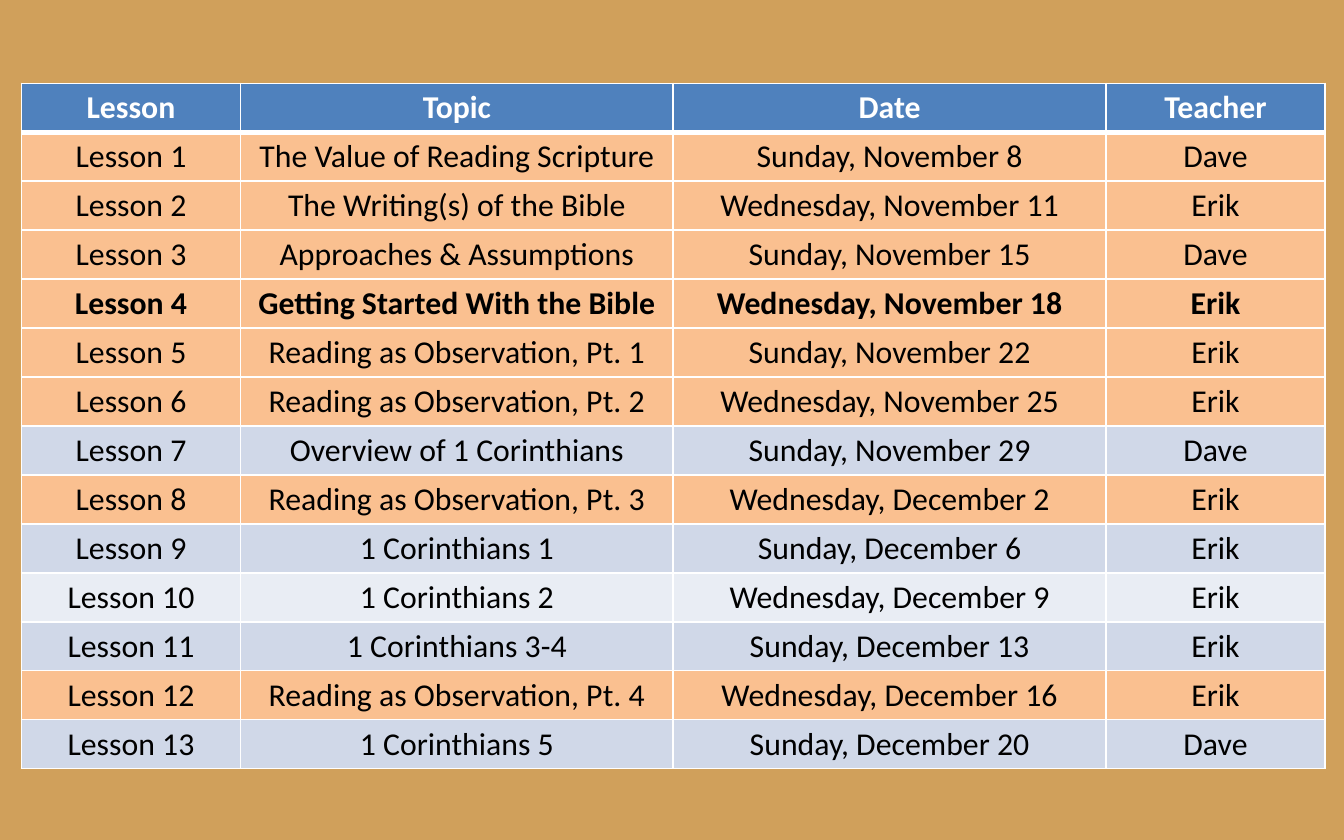
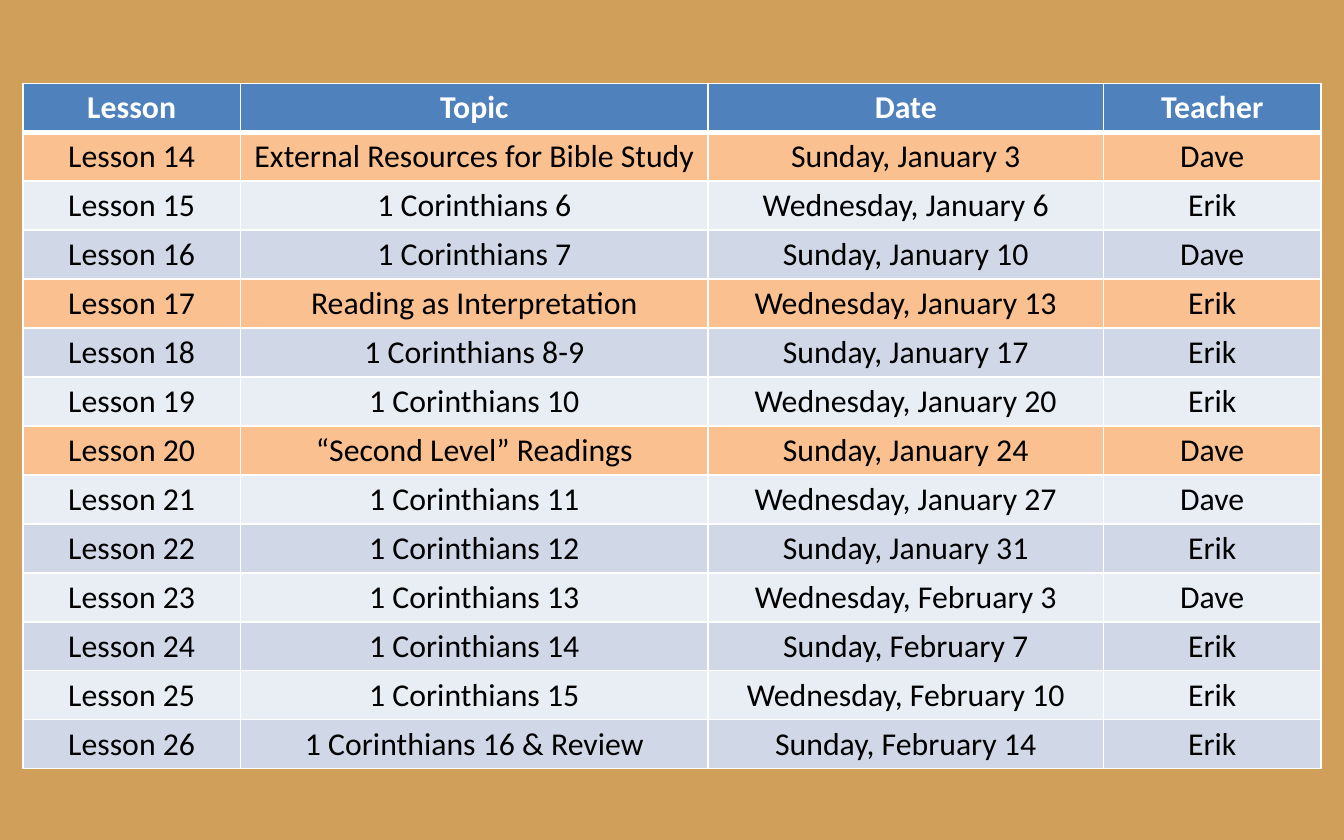
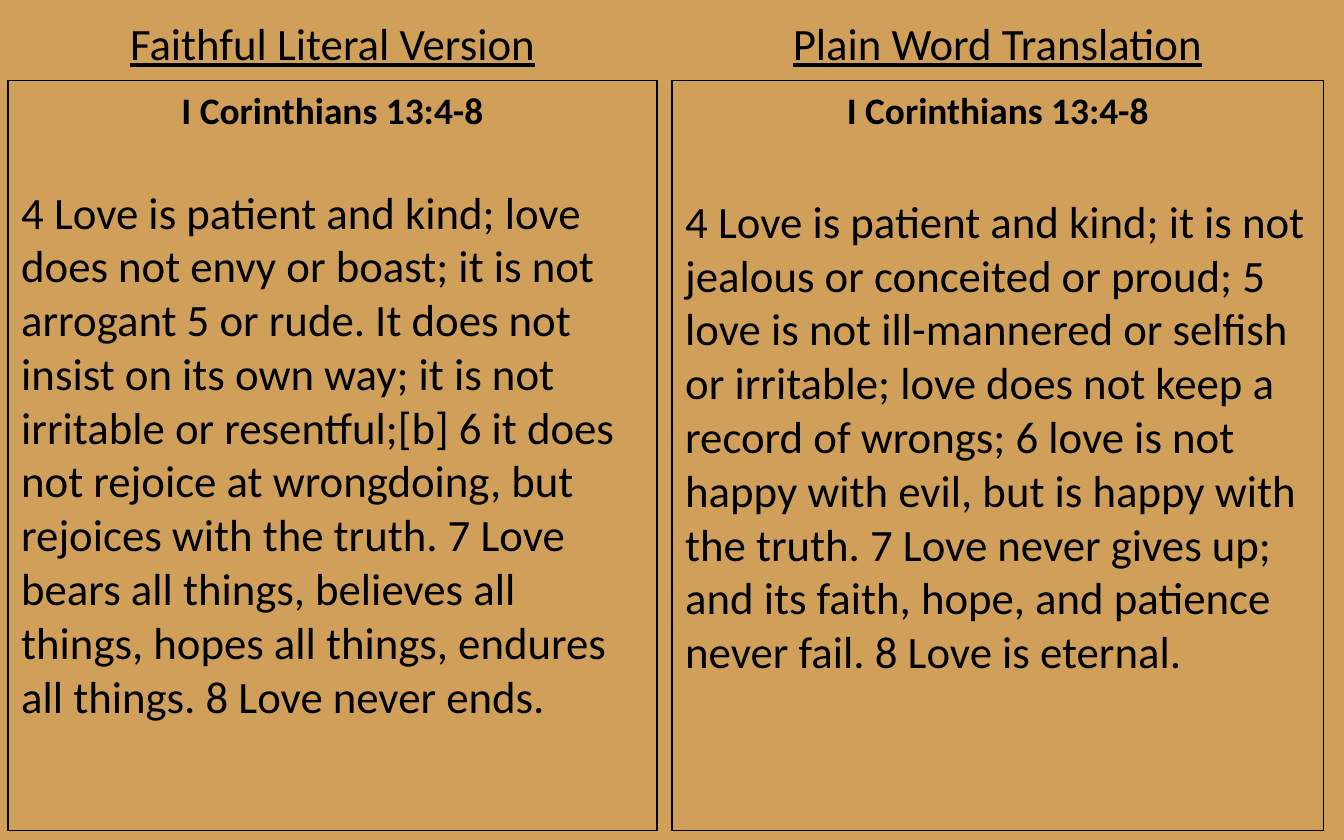
"""Build two lesson schedules and a side-by-side comparison of Bible translations."""
from dataclasses import dataclass

from lxml import etree
from pptx import Presentation
from pptx.dml.color import RGBColor
from pptx.enum.shapes import MSO_SHAPE
from pptx.enum.text import MSO_ANCHOR, PP_ALIGN
from pptx.oxml.ns import qn
from pptx.util import Inches, Pt

RECT = MSO_SHAPE.RECTANGLE
TOP = MSO_ANCHOR.TOP
LEFT, CENTER = PP_ALIGN.LEFT, PP_ALIGN.CENTER


@dataclass(frozen=True)
class Theme:
    font: str = "Calibri"
    background: str = "D0A05B"
    header: str = "4F81BD"
    highlight: str = "FAC090"
    odd_row: str = "D0D8E8"
    even_row: str = "E9EDF4"
    white: str = "FFFFFF"
    black: str = "000000"
    table_size: int = 17
    reference_size: int = 20
    verse_size: int = 24
    border: int = 1
    header_border: int = 3


T = Theme()


def write(p, text, size, color=T.black, align=CENTER, bold=False, underline=False):
    p.text = text
    p.alignment = align
    f = p.runs[0].font
    f.name, f.size, f.bold, f.underline = T.font, Pt(size), bold, underline
    f.color.rgb = RGBColor.from_string(color)


def add_border(cell, side, width):
    ln = etree.SubElement(cell._tc.get_or_add_tcPr(), qn(f"a:ln{side}"), w=str(Pt(width)))
    fill = etree.SubElement(ln, qn("a:solidFill"))
    etree.SubElement(fill, qn("a:srgbClr"), val=T.white)


HEADINGS = ("Lesson", "Topic", "Date", "Teacher")

FALL = [
    ("The Value of Reading Scripture", "Sunday, November 8", "Dave"),
    ("The Writing(s) of the Bible", "Wednesday, November 11", "Erik"),
    ("Approaches & Assumptions", "Sunday, November 15", "Dave"),
    ("Getting Started With the Bible", "Wednesday, November 18", "Erik"),
    ("Reading as Observation, Pt. 1", "Sunday, November 22", "Erik"),
    ("Reading as Observation, Pt. 2", "Wednesday, November 25", "Erik"),
    ("Overview of 1 Corinthians", "Sunday, November 29", "Dave"),
    ("Reading as Observation, Pt. 3", "Wednesday, December 2", "Erik"),
    ("1 Corinthians 1", "Sunday, December 6", "Erik"),
    ("1 Corinthians 2", "Wednesday, December 9", "Erik"),
    ("1 Corinthians 3-4", "Sunday, December 13", "Erik"),
    ("Reading as Observation, Pt. 4", "Wednesday, December 16", "Erik"),
    ("1 Corinthians 5", "Sunday, December 20", "Dave"),
]

WINTER = [
    ("External Resources for Bible Study", "Sunday, January 3", "Dave"),
    ("1 Corinthians 6", "Wednesday, January 6", "Erik"),
    ("1 Corinthians 7", "Sunday, January 10", "Dave"),
    ("Reading as Interpretation", "Wednesday, January 13", "Erik"),
    ("1 Corinthians 8-9", "Sunday, January 17", "Erik"),
    ("1 Corinthians 10", "Wednesday, January 20", "Erik"),
    ("“Second Level” Readings", "Sunday, January 24", "Dave"),
    ("1 Corinthians 11", "Wednesday, January 27", "Dave"),
    ("1 Corinthians 12", "Sunday, January 31", "Erik"),
    ("1 Corinthians 13", "Wednesday, February 3", "Dave"),
    ("1 Corinthians 14", "Sunday, February 7", "Erik"),
    ("1 Corinthians 15", "Wednesday, February 10", "Erik"),
    ("1 Corinthians 16 & Review", "Sunday, February 14", "Erik"),
]

SCHEDULES = [
    (FALL, 1, 0.16, (1.63, 3.22, 3.22, 1.63)),
    (WINTER, 14, 0.17, (1.62, 3.48, 2.94, 1.62)),
]
METHOD_LESSONS = {1, 2, 3, 4, 5, 6, 8, 12, 14, 17, 20}
CURRENT_LESSON = 4

REFERENCE = "I Corinthians 13:4-8"
TRANSLATIONS = [
    ("Faithful Literal Version", 0.31, 4.33, 0.06, 4.83, 28,
     "4 Love is patient and kind; love does not envy or boast; it is not arrogant 5 or rude. "
     "It does not insist on its own way; it is not irritable or resentful;[b] 6 it does not "
     "rejoice at wrongdoing, but rejoices with the truth. 7 Love bears all things, believes "
     "all things, hopes all things, endures all things. 8 Love never ends."),
    ("Plain Word Translation", 5.64, 3.56, 5, 4.85, 33,
     "4 Love is patient and kind; it is not jealous or conceited or proud; 5 love is not "
     "ill-mannered or selfish or irritable; love does not keep a record of wrongs; 6 love is "
     "not happy with evil, but is happy with the truth. 7 Love never gives up; and its faith, "
     "hope, and patience never fail. 8 Love is eternal."),
]

prs = Presentation()
prs.slide_width, prs.slide_height = Inches(10), Inches(6.25)
blank = prs.slide_layouts[6]
bg = prs.slide_master.background.fill
bg.solid()
bg.fore_color.rgb = RGBColor.from_string(T.background)

for lessons, first, left, widths in SCHEDULES:
    s = prs.slides.add_slide(blank)
    rows = [HEADINGS] + [(f"Lesson {n}", *row) for n, row in enumerate(lessons, first)]
    table = s.shapes.add_table(len(rows), len(widths), Inches(left), Inches(0.62),
                               Inches(sum(widths)), Inches(5.1)).table
    table.horz_banding = False
    for column, width in zip(table.columns, widths):
        column.width = Inches(width)
    for i, row in enumerate(rows):
        header = i == 0
        lesson = first + i - 1
        if header:
            fill = T.header
        elif lesson in METHOD_LESSONS:
            fill = T.highlight
        else:
            fill = T.odd_row if i % 2 else T.even_row
        for j, text in enumerate(row):
            cell = table.cell(i, j)
            cell.margin_left = cell.margin_right = Inches(0.07)
            cell.margin_top, cell.margin_bottom = Inches(0.04), Inches(0.03)
            write(cell.text_frame.paragraphs[0], text, T.table_size,
                  T.white if header else T.black,
                  bold=header or lesson == CURRENT_LESSON)
            for side in "LRTB":
                thick = (i, side) in ((0, "B"), (1, "T"))
                add_border(cell, side, T.header_border if thick else T.border)
            cell.fill.solid()
            cell.fill.fore_color.rgb = RGBColor.from_string(fill)

s = prs.slides.add_slide(blank)
for name, title_left, title_width, left, width, gap, verses in TRANSLATIONS:
    title = s.shapes.add_textbox(Inches(title_left), Inches(0.07),
                                 Inches(title_width), Inches(0.46))
    title.text_frame.word_wrap = True
    write(title.text_frame.paragraphs[0], name, T.verse_size, underline=True)

    sp = s.shapes.add_shape(RECT, Inches(left), Inches(0.6), Inches(width), Inches(5.58))
    sp.shadow.inherit = False
    sp.fill.background()
    sp.line.color.rgb = RGBColor.from_string(T.black)
    sp.line.width = Pt(0.75)
    tf = sp.text_frame
    tf.word_wrap = True
    tf.vertical_anchor = TOP
    write(tf.paragraphs[0], REFERENCE, T.reference_size, bold=True)
    p = tf.add_paragraph()
    write(p, verses, T.verse_size, align=LEFT)
    p.space_before = Pt(gap)

prs.save("out.pptx")
